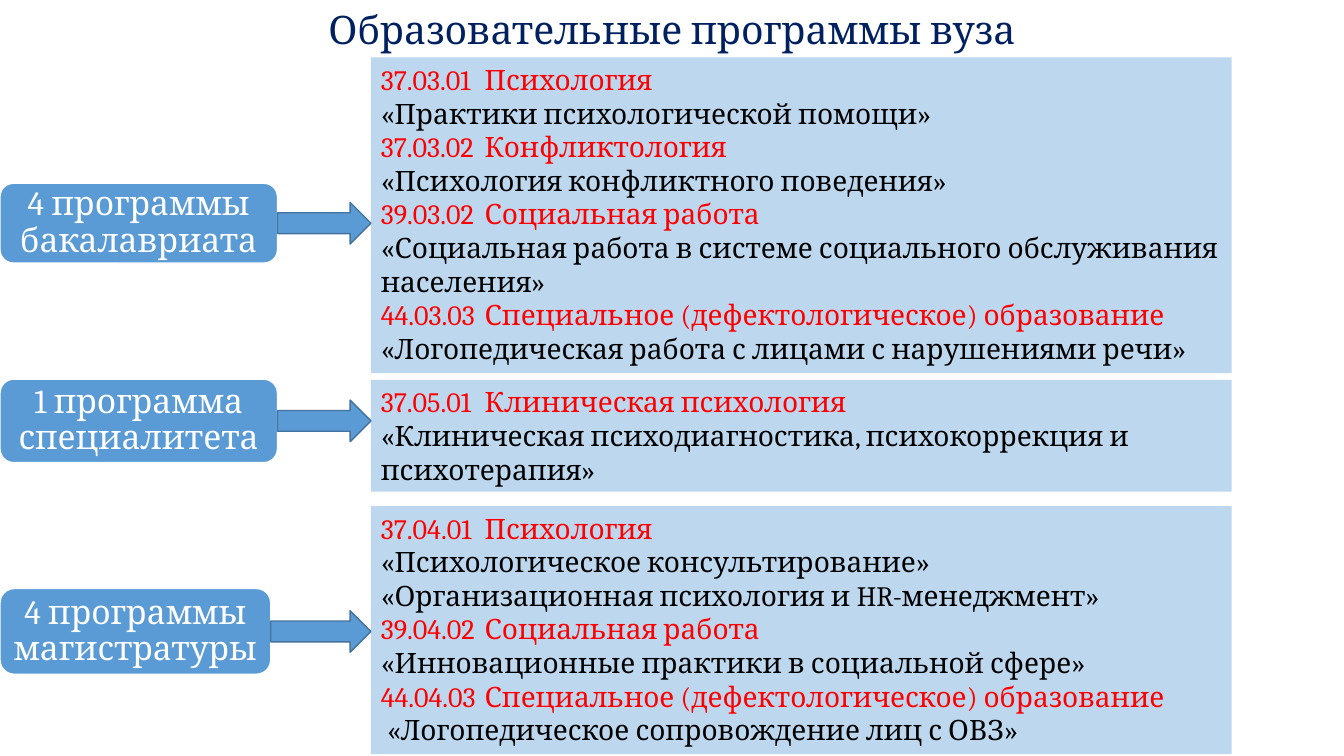
from dataclasses import dataclass

from lxml import etree
from pptx import Presentation
from pptx import util as u
from pptx.dml.color import RGBColor
from pptx.enum import shapes, text
from pptx.oxml.ns import qn

WIDTH, HEIGHT = u.Inches(13.33), u.Inches(7.5)
COLUMN, ROW = WIDTH / 100, HEIGHT / 100  # the grid is 100 by 100

PANEL_LEFT, PANEL_WIDTH = 27.6, 64.05
ARROW_HEIGHT = 5.5
TITLE_HEIGHT = 7.6
NAME_TAB = u.Inches(1.03)


@dataclass(frozen=True)
class Theme:
    font: str = "Cambria"
    title_size: int = 28
    label_size: int = 24
    list_size: int = 20
    navy: str = "002060"
    blue: str = "5B9BD5"
    edge: str = "43739E"
    pale: str = "BDD7EE"
    red: str = "FF0000"
    black: str = "000000"
    white: str = "FFFFFF"


THEME = Theme()


@dataclass(frozen=True)
class Level:
    """One degree level: its label and panel, as (top, height) in grid rows."""
    label: str
    label_rows: tuple
    label_width: float
    panel_rows: tuple
    programmes: tuple


LEVELS = (
    Level("4 программы бакалавриата", (24.25, 10.55), 20.65, (7.6, 41.75), (
        "37.03.01\tПсихология",
        "«Практики психологической помощи»",
        "37.03.02\tКонфликтология",
        "«Психология конфликтного поведения»",
        "39.03.02\tСоциальная работа",
        "«Социальная работа в системе социального обслуживания населения»",
        "44.03.03\tСпециальное (дефектологическое) образование",
        "«Логопедическая работа с лицами с нарушениями речи»",
    )),
    Level("1 программа специалитета", (50.15, 11.05), 20.65, (50.25, 14.8), (
        "37.05.01\tКлиническая психология",
        "«Клиническая психодиагностика, психокоррекция и психотерапия»",
    )),
    Level("4 программы магистратуры", (77.85, 11.35), 20.15, (66.95, 32.8), (
        "37.04.01\tПсихология",
        "«Психологическое консультирование»",
        "«Организационная психология и HR-менеджмент»",
        "39.04.02\tСоциальная работа",
        "«Инновационные практики в социальной сфере»",
        "44.04.03\tСпециальное (дефектологическое) образование",
        " «Логопедическое сопровождение лиц с ОВЗ»",
    )),
)


def cells(left, top, width, height):
    """Turn grid columns and rows into slide lengths."""
    return (round(left * COLUMN), round(top * ROW),
            round(width * COLUMN), round(height * ROW))


def write(para, words, *, size, color, align=text.PP_ALIGN.LEFT, spacing=1.0):
    para.alignment = align
    para.line_spacing = spacing
    span = para.add_run()
    span.text = words
    span.font.name = THEME.font
    span.font.size = u.Pt(size)
    span.font.color.rgb = RGBColor.from_string(color)


def add_tab_stop(para, position):
    tabs = etree.SubElement(para._p.get_or_add_pPr(), qn("a:tabLst"))
    etree.SubElement(tabs, qn("a:tab"), pos=str(position), algn="l")


def add_block(page, kind, area, *, fill, line=None):
    block = page.shapes.add_shape(kind, *cells(*area))
    block.shadow.inherit = False
    block.fill.solid()
    block.fill.fore_color.rgb = RGBColor.from_string(fill)
    if line:
        block.line.color.rgb = RGBColor.from_string(line)
        block.line.width = u.Pt(1)
    else:
        block.line.fill.background()
    block.text_frame.word_wrap = True
    return block


def add_title(page, words):
    title = page.shapes.title
    title.left, title.top, title.width, title.height = cells(0, 0, 100, TITLE_HEIGHT)
    title.text_frame.vertical_anchor = text.MSO_ANCHOR.TOP
    title.text_frame.auto_size = text.MSO_AUTO_SIZE.NONE
    write(title.text_frame.paragraphs[0], words, size=THEME.title_size,
          color=THEME.navy, align=text.PP_ALIGN.CENTER)


def add_label(page, level):
    top, height = level.label_rows
    label = add_block(page, shapes.MSO_SHAPE.ROUNDED_RECTANGLE,
                      (0, top, level.label_width, height),
                      fill=THEME.blue, line=THEME.white)
    frame = label.text_frame
    frame.margin_left = frame.margin_right = u.Inches(0.08)
    frame.margin_top = frame.margin_bottom = u.Inches(0.04)
    frame.vertical_anchor = text.MSO_ANCHOR.MIDDLE
    write(frame.paragraphs[0], level.label, size=THEME.label_size,
          color=THEME.white, align=text.PP_ALIGN.CENTER, spacing=0.9)


def add_panel(page, level):
    top, height = level.panel_rows
    panel = add_block(page, shapes.MSO_SHAPE.RECTANGLE,
                      (PANEL_LEFT, top, PANEL_WIDTH, height), fill=THEME.pale)
    frame = panel.text_frame
    frame.vertical_anchor = text.MSO_ANCHOR.TOP
    for index, words in enumerate(level.programmes):
        para = frame.add_paragraph() if index else frame.paragraphs[0]
        is_field = "\t" in words
        if is_field:
            add_tab_stop(para, NAME_TAB)
        write(para, words, size=THEME.list_size,
              color=THEME.red if is_field else THEME.black)


def add_arrow(page, level):
    """Join a label to its panel at the label's middle."""
    top, height = level.label_rows
    add_block(page, shapes.MSO_SHAPE.RIGHT_ARROW,
              (level.label_width, top + (height - ARROW_HEIGHT) / 2,
               PANEL_LEFT - level.label_width, ARROW_HEIGHT),
              fill=THEME.blue, line=THEME.edge)


def main():
    deck = Presentation()
    deck.slide_width, deck.slide_height = WIDTH, HEIGHT
    page = deck.slides.add_slide(deck.slide_layouts.get_by_name("Title Only"))
    add_title(page, "Образовательные программы вуза")
    for level in LEVELS:
        add_label(page, level)
        add_panel(page, level)
        add_arrow(page, level)
    deck.save("out.pptx")


if __name__ == "__main__":
    main()
